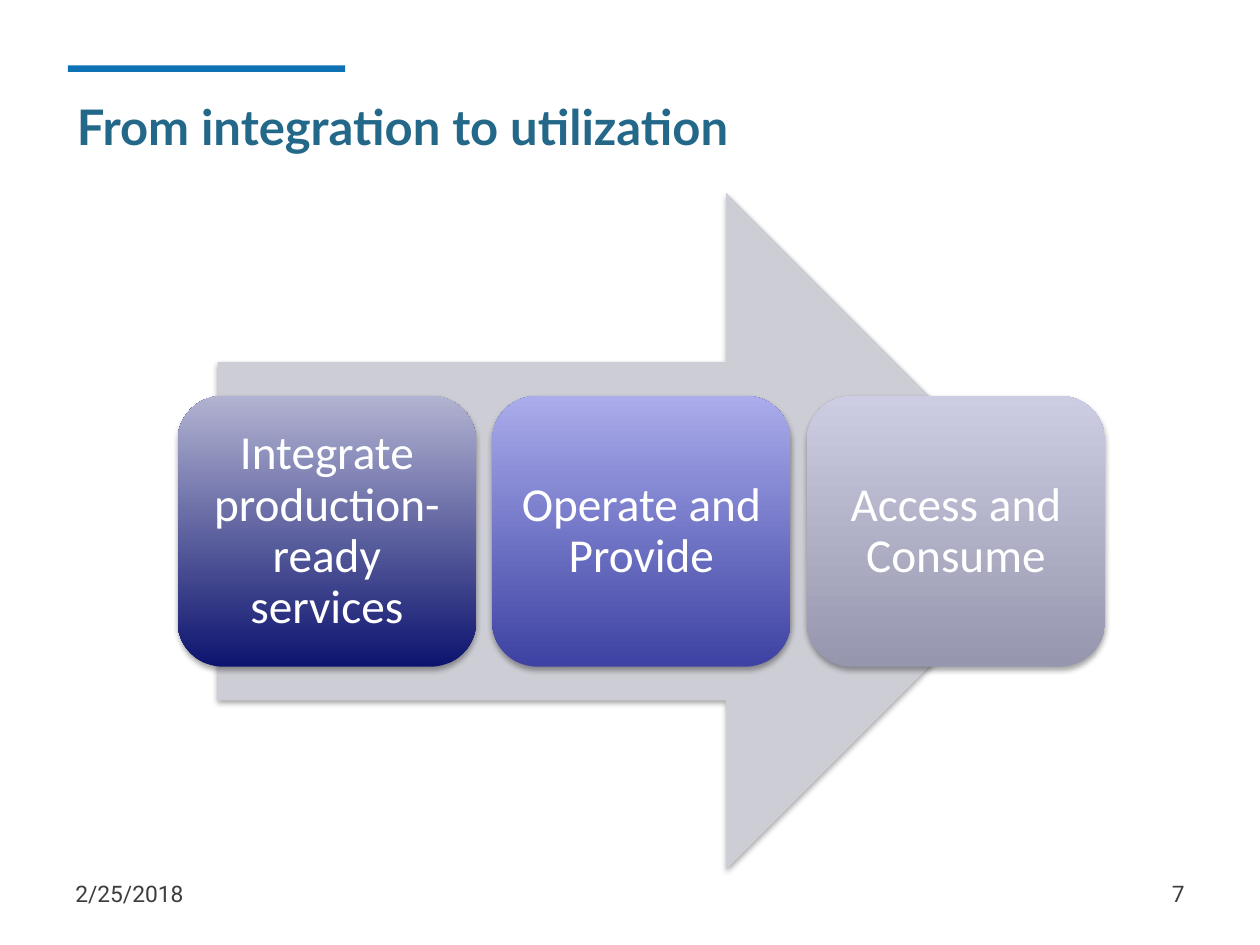
"""Build the slide that leads from integration to utilization."""
from dataclasses import dataclass

from lxml.etree import SubElement
from pptx import Presentation
from pptx.dml.color import RGBColor
from pptx.enum.shapes import MSO_SHAPE
from pptx.enum.text import MSO_ANCHOR, MSO_AUTO_SIZE, PP_ALIGN
from pptx.oxml.ns import qn
from pptx.shapes.autoshape import Shape
from pptx.slide import Slide
from pptx.util import Cm, Pt


@dataclass(frozen=True)
class Area:
    """A rectangle on the slide, in centimetres."""
    left: float
    top: float
    width: float
    height: float

    def lengths(self) -> tuple[Cm, Cm, Cm, Cm]:
        """Return the four measures as lengths."""
        return Cm(self.left), Cm(self.top), Cm(self.width), Cm(self.height)


@dataclass(frozen=True)
class TextStyle:
    """The look of one piece of text."""
    font: str
    size: float
    colour: str
    align: PP_ALIGN = PP_ALIGN.LEFT
    bold: bool = False
    line_spacing: float = 1.0
    inset: tuple[float, float] = (0.25, 0.13)


@dataclass(frozen=True)
class Stage:
    """One step along the arrow."""
    label: str
    bottom_colour: str
    top_colour: str


TITLE = TextStyle("Lato", 28, "246889", bold=True)
DATE = TextStyle("Roboto", 13, "3D3D3D")
PAGE_NUMBER = TextStyle("Roboto", 13, "3D3D3D", PP_ALIGN.RIGHT)
STAGE = TextStyle("Calibri", 27, "FFFFFF", PP_ALIGN.CENTER,
                  line_spacing=0.9, inset=(0.28, 0.28))

STAGES = [
    Stage("Integrate production-ready services", "0D146F", "B2B3D1"),
    Stage("Operate and Provide", "3D42A3", "AAACEB"),
    Stage("Access and Consume", "9697AE", "CCCDE2"),
]
FIRST_STAGE = Area(3.58, 7.98, 6.02, 5.46)
STAGE_PITCH = 6.34


def colour(value: str) -> RGBColor:
    """Turn a hex string into a colour."""
    return RGBColor.from_string(value)


def write(shape: Shape, text: str, style: TextStyle) -> None:
    """Put styled text into a shape, centred vertically."""
    frame = shape.text_frame
    frame.text = text
    frame.word_wrap = True
    frame.auto_size = MSO_AUTO_SIZE.NONE
    frame.vertical_anchor = MSO_ANCHOR.MIDDLE
    frame.margin_left = frame.margin_right = Cm(style.inset[0])
    frame.margin_top = frame.margin_bottom = Cm(style.inset[1])
    para = frame.paragraphs[0]
    para.alignment = style.align
    para.line_spacing = style.line_spacing
    for span in para.runs:
        span.font.name = style.font
        span.font.size = Pt(style.size)
        span.font.bold = style.bold
        span.font.color.rgb = colour(style.colour)


def add_block(page: Slide, kind: MSO_SHAPE, area: Area) -> Shape:
    """Add a preset shape without outline or shadow."""
    block = page.shapes.add_shape(kind, *area.lengths())
    block.shadow.inherit = False
    block.line.fill.background()
    return block


def fill_solid(block: Shape, value: str) -> None:
    """Fill a shape with one colour."""
    block.fill.solid()
    block.fill.fore_color.rgb = colour(value)


def cast_shadow(block: Shape) -> None:
    """Give a shape a soft shadow below it."""
    effects = block.element.spPr.find(qn("a:effectLst"))
    shadow = SubElement(effects, qn("a:outerShdw"), blurRad=str(Pt(3.1)),
                        dist=str(Pt(1.8)), dir="5400000", rotWithShape="0")
    shade = SubElement(shadow, qn("a:srgbClr"), val="000000")
    SubElement(shade, qn("a:alpha"), val="35000")


def add_stage(page: Slide, stage: Stage, area: Area) -> None:
    """Draw one stage as a rounded box with a vertical gradient."""
    box = add_block(page, MSO_SHAPE.ROUNDED_RECTANGLE, area)
    box.fill.gradient()
    box.fill.gradient_angle = 90
    ends = (stage.bottom_colour, stage.top_colour)
    for position, (stop, value) in enumerate(zip(box.fill.gradient_stops, ends)):
        stop.position = position
        stop.color.rgb = colour(value)
    cast_shadow(box)
    write(box, stage.label, STAGE)


def add_label(page: Slide, text: str, area: Area, style: TextStyle) -> None:
    """Add a text box with one styled line."""
    write(page.shapes.add_textbox(*area.lengths()), text, style)


def main() -> None:
    """Build and save the deck."""
    deck = Presentation()
    deck.slide_width, deck.slide_height = Cm(25.4), Cm(19.05)
    page = deck.slides.add_slide(deck.slide_layouts[5])

    title = page.shapes.title
    title.left, title.top, title.width, title.height = Area(1.3, 1.73, 15.19, 1.6).lengths()
    write(title, "From integration to utilization", TITLE)

    fill_solid(add_block(page, MSO_SHAPE.RECTANGLE, Area(1.37, 1.32, 5.59, 0.13)), "0E71B4")
    add_label(page, "2/25/2018", Area(1.27, 17.5, 5.92, 1.02), DATE)
    add_label(page, "7", Area(18.21, 17.5, 5.92, 1.02), PAGE_NUMBER)

    arrow = add_block(page, MSO_SHAPE.RIGHT_ARROW, Area(4.39, 3.89, 17.07, 13.64))
    fill_solid(arrow, "CDCDD5")
    cast_shadow(arrow)
    for index, stage in enumerate(STAGES):
        left = FIRST_STAGE.left + index * STAGE_PITCH
        add_stage(page, stage, Area(left, FIRST_STAGE.top, FIRST_STAGE.width, FIRST_STAGE.height))

    deck.save("out.pptx")


if __name__ == "__main__":
    main()
